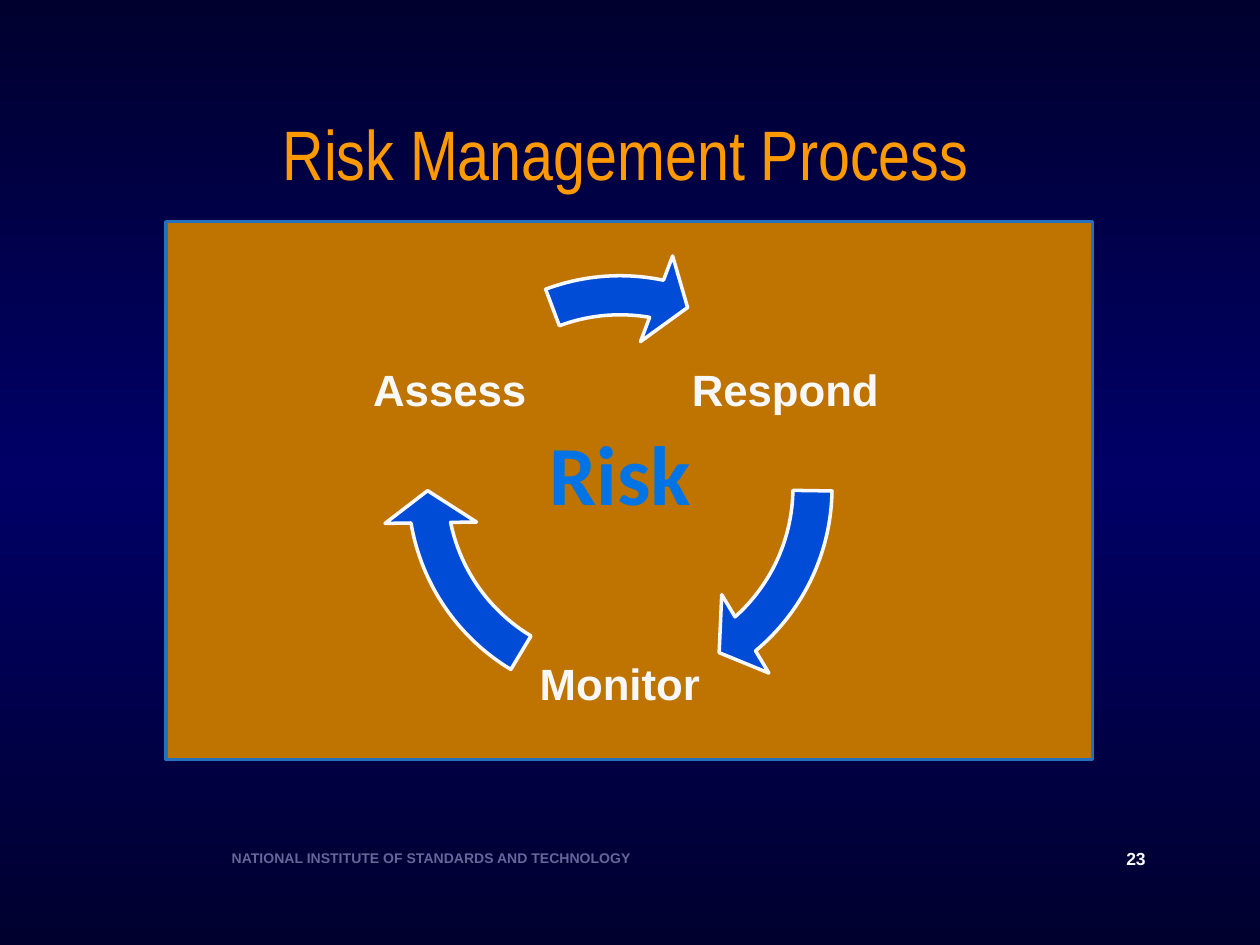
from copy import deepcopy
from dataclasses import dataclass

from pptx import Presentation
from pptx.dml.color import RGBColor
from pptx.enum.shapes import MSO_SHAPE
from pptx.enum.text import MSO_ANCHOR, MSO_AUTO_SIZE, PP_ALIGN
from pptx.oxml.ns import qn
from pptx.shapes.base import BaseShape
from pptx.slide import Slide
from pptx.util import Pt

RECTANGLE = MSO_SHAPE.RECTANGLE
CIRCULAR_ARROW = MSO_SHAPE.CIRCULAR_ARROW
TOP, MIDDLE = MSO_ANCHOR.TOP, MSO_ANCHOR.MIDDLE
LEFT, CENTER = PP_ALIGN.LEFT, PP_ALIGN.CENTER


@dataclass(frozen=True)
class TextStyle:
    font: str
    size: float
    color: str
    bold: bool = True


@dataclass(frozen=True)
class Theme:
    night: str = "00002F"
    navy: str = "000066"
    panel: str = "BF7300"
    panel_line: str = "2671BD"
    arrow: str = "004CD6"
    arrow_line: str = "F8F8F8"
    line_width: float = 2
    title: TextStyle = TextStyle("Arial Narrow", 40, "FF9900", False)
    step: TextStyle = TextStyle("Arial", 25, "F8F8F8")
    hub: TextStyle = TextStyle("Calibri", 48, "0073E5")
    footer: TextStyle = TextStyle("Arial", 8, "666699")
    page: TextStyle = TextStyle("Arial", 10, "F8F8F8")


@dataclass(frozen=True)
class Box:
    left: float
    top: float
    width: float
    height: float

    def lengths(self) -> tuple[Pt, Pt, Pt, Pt]:
        return Pt(self.left), Pt(self.top), Pt(self.width), Pt(self.height)


@dataclass(frozen=True)
class Step:
    """A step of the cycle and the arrow that leaves it, as adjustment values."""
    name: str
    left: float
    top: float
    align: PP_ALIGN
    arrow_end: float
    arrow_start: float


THEME = Theme()
TITLE_BOX = Box(37.4, 48.2, 640, 77.8)
PANEL_BOX = Box(95, 126.7, 529.2, 307.4)
CYCLE_BOX = Box(218.2, 142.6, 272.2, 272.2)
HUB_BOX = Box(259.2, 237.6, 190.8, 57.6)
FOOTER_BOX = Box(125.3, 481.7, 522, 16.6)
PAGE_BOX = Box(636.5, 481, 30.2, 19.4)
STEP_SIZE = 115.2
STEP_INSET = 2.2
ARROW_BAND, ARROW_HEAD_ANGLE, ARROW_HEAD_WIDTH = 0.082, 5.762, 0.096
STEPS = (
    Step("Respond", 393.1, 164.9, LEFT, 29.636, 0.519),
    Step("Monitor", 296.6, 332.6, CENTER, 101.719, 72.602),
    Step("Assess", 199.4, 164.9, CENTER, 168.565, 149.674),
)


def paint_background(slide: Slide) -> None:
    fill = slide.background.fill
    fill.gradient()
    fill.gradient_angle = 90
    stop_list = next(slide.element.iter(qn("a:gsLst")))
    stop_list.append(deepcopy(stop_list[0]))
    colors = (THEME.night, THEME.navy, THEME.night)
    for stop, position, color in zip(fill.gradient_stops, (0, 0.5, 1), colors):
        stop.position = position
        stop.color.rgb = RGBColor.from_string(color)


def write(shape: BaseShape, text: str, style: TextStyle, align: PP_ALIGN,
          anchor: MSO_ANCHOR, inset: float | None = None) -> None:
    frame = shape.text_frame
    frame_format = {"word_wrap": True, "auto_size": MSO_AUTO_SIZE.NONE,
                    "vertical_anchor": anchor}
    if inset is not None:
        for side in ("left", "top", "right", "bottom"):
            frame_format[f"margin_{side}"] = Pt(inset)
    for name, value in frame_format.items():
        setattr(frame, name, value)
    frame.text = text
    paragraph = frame.paragraphs[0]
    paragraph.alignment = align
    font = paragraph.runs[0].font
    font_format = {"name": style.font, "size": Pt(style.size), "bold": style.bold}
    for name, value in font_format.items():
        setattr(font, name, value)
    font.color.rgb = RGBColor.from_string(style.color)


def add_text(slide: Slide, box: Box, text: str, style: TextStyle,
             align: PP_ALIGN = LEFT, anchor: MSO_ANCHOR = TOP,
             inset: float | None = None) -> None:
    write(slide.shapes.add_textbox(*box.lengths()), text, style, align, anchor, inset)


def add_filled(slide: Slide, kind: MSO_SHAPE, box: Box, fill: str, line: str) -> BaseShape:
    shape = slide.shapes.add_shape(kind, *box.lengths())
    shape.shadow.inherit = False
    shape.fill.solid()
    shape.fill.fore_color.rgb = RGBColor.from_string(fill)
    shape.line.color.rgb = RGBColor.from_string(line)
    shape.line.width = Pt(THEME.line_width)
    return shape


def add_title(slide: Slide, text: str) -> None:
    title = slide.shapes.title
    for name, value in zip(("left", "top", "width", "height"), TITLE_BOX.lengths()):
        setattr(title, name, value)
    write(title, text, THEME.title, CENTER, MIDDLE)


def add_step(slide: Slide, step: Step) -> None:
    label_box = Box(step.left, step.top, STEP_SIZE, STEP_SIZE)
    add_text(slide, label_box, step.name, THEME.step, step.align, MIDDLE, STEP_INSET)
    arrow = add_filled(slide, CIRCULAR_ARROW, CYCLE_BOX, THEME.arrow, THEME.arrow_line)
    adjustments = (ARROW_BAND, ARROW_HEAD_ANGLE, step.arrow_end,
                   step.arrow_start, ARROW_HEAD_WIDTH)
    for index, value in enumerate(adjustments):
        arrow.adjustments[index] = value


def main() -> None:
    presentation = Presentation()
    presentation.slide_width, presentation.slide_height = Pt(720), Pt(540)
    slide = presentation.slides.add_slide(presentation.slide_layouts[5])
    paint_background(slide)
    add_title(slide, "Risk Management Process")
    add_text(slide, FOOTER_BOX, "NATIONAL INSTITUTE OF STANDARDS AND TECHNOLOGY", THEME.footer)
    add_text(slide, PAGE_BOX, "23", THEME.page)
    add_filled(slide, RECTANGLE, PANEL_BOX, THEME.panel, THEME.panel_line)
    for step in STEPS:
        add_step(slide, step)
    add_text(slide, HUB_BOX, "Risk", THEME.hub, CENTER)
    presentation.save("out.pptx")


if __name__ == "__main__":
    main()
